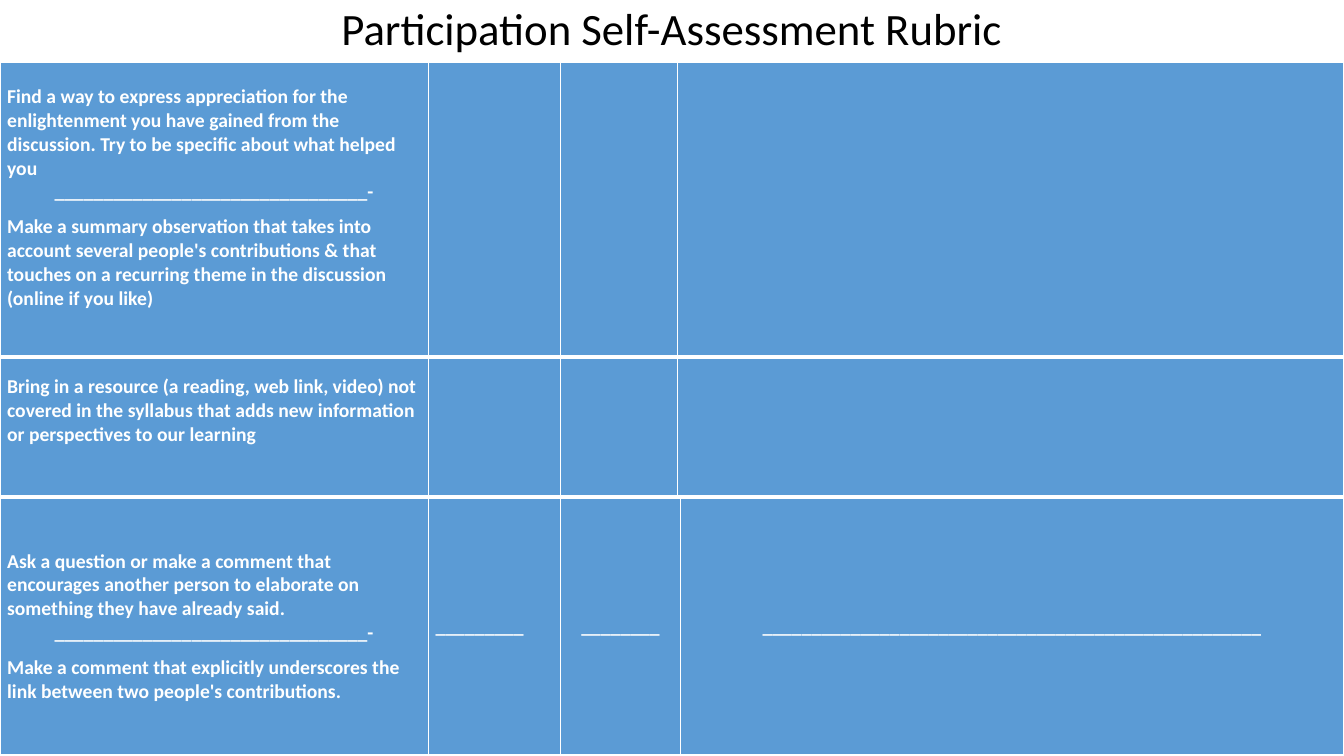
from lxml.etree import SubElement
from pptx import Presentation
from pptx.dml.color import RGBColor
from pptx.enum.text import MSO_ANCHOR, PP_ALIGN
from pptx.oxml.ns import qn
from pptx.util import Cm, Pt

TITLE = "Participation Self-Assessment Rubric"
FONT = "Calibri"
COLORS = {"fill": "5B9BD5", "white": "FFFFFF", "black": "000000"}
LEFT, CENTER = PP_ALIGN.LEFT, PP_ALIGN.CENTER
DIVIDER = ("_" * 32 + "-", CENTER, 0)

TABLES = [
    {
        "top": 1.57,
        "cols": [10.8, 3.33, 2.95, 16.79],
        "rows": [
            {"height": 7.42, "pad": 0.6, "top_line": 1, "bottom_line": 3, "cells": [
                [("Find a way to express appreciation for the enlightenment you have gained from the "
                  "discussion. Try to be specific about what helped you", LEFT, 7.7),
                 DIVIDER,
                 ("Make a summary observation that takes into account several people's contributions "
                  "& that touches on a recurring theme in the discussion (online if you like)", LEFT, 7.7)],
                [], [], []]},
            {"height": 4.52, "pad": 1.8, "top_line": 3, "bottom_line": 1, "cells": [
                [("Bring in a resource (a reading, web link, video) not covered in the syllabus that "
                  "adds new information or perspectives to our learning", LEFT, 7.7)],
                [], [], []]},
        ],
    },
    {
        "top": 12.52,
        "cols": [10.8, 3.33, 3.02, 16.72],
        "rows": [
            {"height": 6.53, "pad": 0, "top_line": 3, "bottom_line": 3, "cells": [
                [("Ask a question or make a comment that encourages another person to elaborate on "
                  "something they have already said.", LEFT, 0),
                 DIVIDER,
                 ("Make a comment that explicitly underscores the link between two people's "
                  "contributions.", LEFT, 7.7)],
                [("_" * 9, LEFT, 0)],
                [("_" * 8, CENTER, 0)],
                [("_" * 51, CENTER, 0)]]},
        ],
    },
]


def style(p, size, color, bold, align):
    p.alignment = align
    p.font.name = FONT
    p.font.size = Pt(size)
    p.font.bold = bold
    p.font.color.rgb = RGBColor.from_string(COLORS[color])


def set_borders(cell, top, bottom):
    tcPr = cell._tc.get_or_add_tcPr()
    sides = [("a:lnL", 1), ("a:lnR", 1), ("a:lnT", top), ("a:lnB", bottom)]
    for i, (tag, width) in enumerate(sides):
        ln = SubElement(tcPr, qn(tag), w=str(Pt(width)))
        fill = SubElement(ln, qn("a:solidFill"))
        SubElement(fill, qn("a:srgbClr"), val=COLORS["white"])
        tcPr.insert(i, ln)


def fill_cell(cell, paras, row):
    cell.fill.solid()
    cell.fill.fore_color.rgb = RGBColor.from_string(COLORS["fill"])
    set_borders(cell, row["top_line"], row["bottom_line"])
    cell.vertical_anchor = MSO_ANCHOR.MIDDLE
    cell.margin_left = cell.margin_right = Cm(0.18)
    cell.margin_top = Cm(0)
    cell.margin_bottom = Cm(row["pad"] if paras else 0)
    tf = cell.text_frame
    for i, (text, align, before) in enumerate(paras):
        p = tf.add_paragraph() if i else tf.paragraphs[0]
        p.text = text
        p.space_before = Pt(before)
        style(p, 14, "white", True, align)


def add_rubric(s, spec):
    rows, cols = spec["rows"], spec["cols"]
    height = sum(row["height"] for row in rows)
    frame = s.shapes.add_table(len(rows), len(cols), Cm(0), Cm(spec["top"]), Cm(sum(cols)), Cm(height))
    tbl = frame.table
    tbl.first_row = tbl.horz_banding = False
    for col, width in zip(tbl.columns, cols):
        col.width = Cm(width)
    for r, row in enumerate(rows):
        tbl.rows[r].height = Cm(row["height"])
        for c, paras in enumerate(row["cells"]):
            fill_cell(tbl.cell(r, c), paras, row)


def main():
    prs = Presentation()
    prs.slide_width, prs.slide_height = Cm(33.87), Cm(19.05)
    s = prs.slides.add_slide(prs.slide_layouts[6])
    tf = s.shapes.add_textbox(Cm(0), Cm(0), Cm(33.87), Cm(1.57)).text_frame
    tf.word_wrap = True
    tf.vertical_anchor = MSO_ANCHOR.MIDDLE
    p = tf.paragraphs[0]
    p.text = TITLE
    p.line_spacing = 0.9
    style(p, 32, "black", False, CENTER)
    for spec in TABLES:
        add_rubric(s, spec)
    prs.save("out.pptx")


if __name__ == "__main__":
    main()
